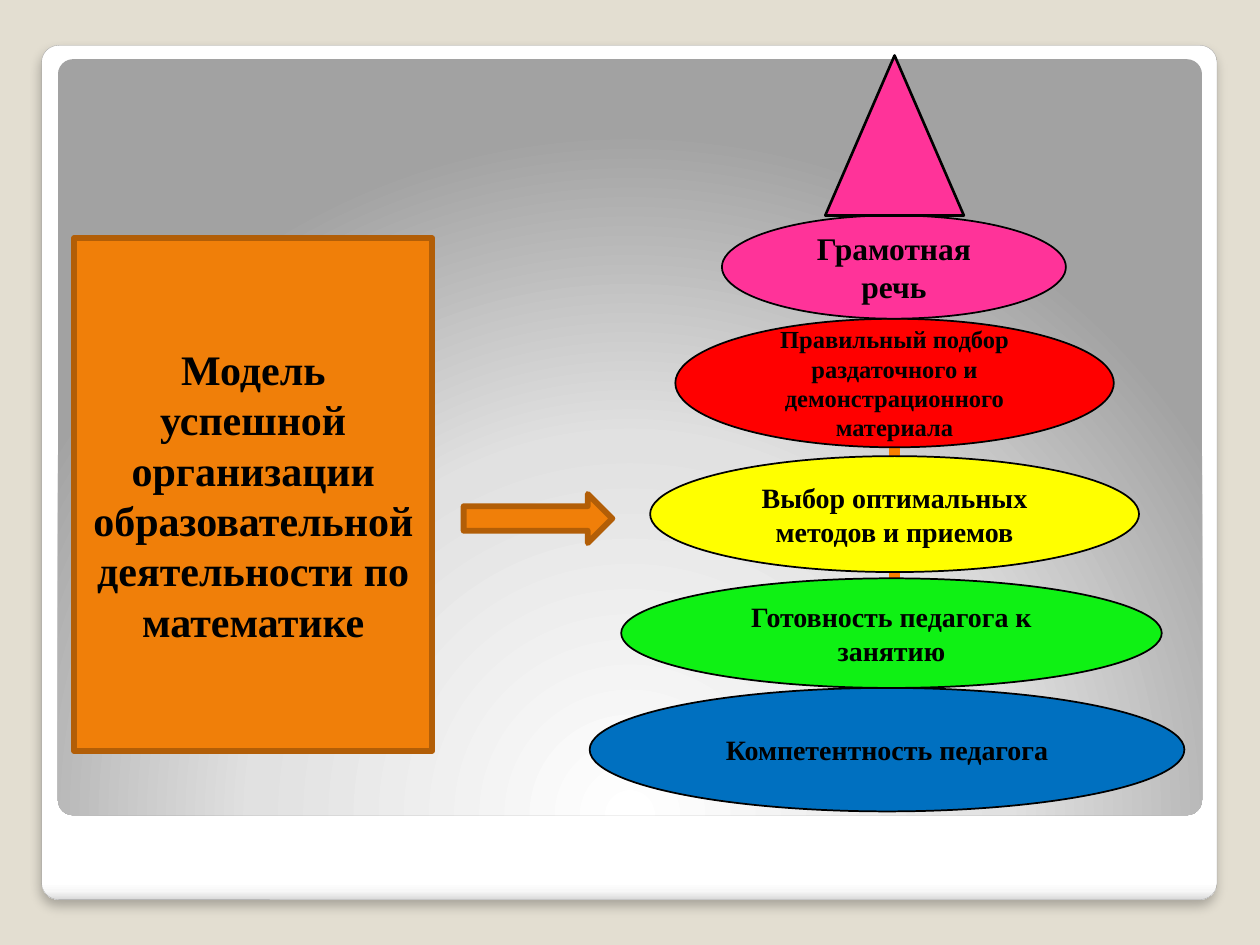
from lxml.etree import SubElement
from pptx import Presentation
from pptx.dml.color import RGBColor
from pptx.enum.shapes import MSO_CONNECTOR, MSO_SHAPE as Shape
from pptx.enum.text import MSO_ANCHOR, PP_ALIGN
from pptx.oxml import parse_xml
from pptx.oxml.ns import nsdecls, qn
from pptx.util import Inches, Pt

WIDTH, HEIGHT = Inches(10), Inches(7.5)
FONT = "Times New Roman"
BEIGE = RGBColor(0xE3, 0xDE, 0xD1)
WHITE = RGBColor(0xFF, 0xFF, 0xFF)
PALE = RGBColor(0xF7, 0xF7, 0xF7)
SILVER = RGBColor(0xDA, 0xDA, 0xDA)
LIGHT_GREY = RGBColor(0xE1, 0xE1, 0xE1)
GREY = RGBColor(0xA2, 0xA2, 0xA2)
EDGE_GREY = RGBColor(0xA4, 0xA4, 0xA4)
BLACK = RGBColor(0, 0, 0)
ORANGE = RGBColor(0xF0, 0x7F, 0x09)
BROWN = RGBColor(0xB2, 0x5E, 0x07)
BRIGHT_ORANGE = RGBColor(0xF9, 0x7F, 0x00)
PINK = RGBColor(0xFF, 0x33, 0x99)
RED = RGBColor(0xFF, 0, 0)
YELLOW = RGBColor(0xFF, 0xFF, 0)
GREEN = RGBColor(0x0F, 0xF1, 0x14)
BLUE = RGBColor(0, 0x70, 0xC0)

# Left, top, width, height in percent of the slide; fill; text; size
LEVELS = [
    ((46.8, 72.8, 47.2, 13.07), BLUE, "Компетентность педагога", 16),
    ((49.3, 61.2, 42.9, 11.6), GREEN, "Готовность педагога к занятию", 16),
    ((53.6, 33.73, 34.8, 13.6), RED,
     "Правильный подбор раздаточного и демонстрационного материала", 14),
    ((51.6, 48.27, 38.8, 12.27), YELLOW, "Выбор оптимальных методов и приемов", 16),
    ((57.3, 22.8, 27.3, 10.93), PINK, "Грамотная речь", 18),
]


def across(percent):
    return round(WIDTH * percent / 100)


def down(percent):
    return round(HEIGHT * percent / 100)


def add_figure(page, kind, area, fill=None, line=None, weight=1):
    """Add a preset shape whose area is given in percent of the slide."""
    left, top, width, height = area
    figure = page.shapes.add_shape(
        kind, across(left), down(top), across(width), down(height))
    figure.shadow.inherit = False
    if fill is None:
        figure.fill.background()
    else:
        figure.fill.solid()
        figure.fill.fore_color.rgb = fill
    if line is None:
        figure.line.fill.background()
    else:
        figure.line.color.rgb = line
        figure.line.width = Pt(weight)
    return figure


def round_joins(figure):
    SubElement(figure.element.spPr.find(qn("a:ln")), qn("a:round"))


def set_gradient(figure, stops, direction):
    """Replace the empty fill by colour stops (percent, colour)."""
    marks = "".join(
        f'<a:gs pos="{place * 1000}"><a:srgbClr val="{colour}"/></a:gs>'
        for place, colour in stops)
    gradient = parse_xml(
        f'<a:gradFill {nsdecls("a")} rotWithShape="1">'
        f"<a:gsLst>{marks}</a:gsLst>{direction}</a:gradFill>")
    properties = figure.element.spPr
    properties.replace(properties.find(qn("a:noFill")), gradient)


def set_shadow(figure, blur, distance, opacity):
    effects = figure.element.spPr.find(qn("a:effectLst"))
    effects.append(parse_xml(
        f'<a:outerShdw {nsdecls("a")} blurRad="{Pt(blur)}" dist="{Pt(distance)}" '
        f'dir="5400000" algn="t" rotWithShape="0"><a:srgbClr val="{BLACK}">'
        f'<a:alpha val="{opacity * 1000}"/></a:srgbClr></a:outerShdw>'))


def write(figure, text, size):
    frame = figure.text_frame
    frame.word_wrap = True
    frame.vertical_anchor = MSO_ANCHOR.MIDDLE
    para = frame.paragraphs[0]
    para.alignment = PP_ALIGN.CENTER
    span = para.add_run()
    span.text = text
    span.font.name = FONT
    span.font.size = Pt(size)
    span.font.bold = True
    span.font.color.rgb = BLACK


def add_backdrop(page):
    page.background.fill.solid()
    page.background.fill.fore_color.rgb = BEIGE
    card = add_figure(page, Shape.ROUNDED_RECTANGLE, (3.3, 4.8, 93.3, 90.4),
                      line=EDGE_GREY, weight=0.16)
    set_gradient(card, [(0, WHITE), (98, WHITE), (99, PALE), (100, SILVER)],
                 '<a:lin ang="5400000" scaled="0"/>')
    set_shadow(card, blur=6, distance=4, opacity=25)
    panel = add_figure(page, Shape.ROUNDED_RECTANGLE, (4.6, 6.27, 90.8, 80))
    set_gradient(panel, [(0, WHITE), (55, LIGHT_GREY), (100, GREY)],
                 '<a:path path="circle"><a:fillToRect l="50000" t="175000" '
                 'r="50000" b="-75000"/></a:path>')
    for layer in (card, panel):
        layer.adjustments[0] = 0.02


def add_axis(page):
    """Add the vertical rod that the levels are threaded on."""
    axis = page.shapes.add_connector(
        MSO_CONNECTOR.STRAIGHT, across(71), down(70.27), across(71), down(25.2))
    axis.line.color.rgb = BRIGHT_ORANGE
    axis.line.width = Pt(6)
    SubElement(axis.element.spPr, qn("a:effectLst"))


def add_pyramid(page):
    add_axis(page)
    for area, colour, text, size in LEVELS:
        write(add_figure(page, Shape.OVAL, area, colour, BLACK), text, size)
    add_figure(page, Shape.FLOWCHART_EXTRACT, (65.5, 5.87, 11, 16.93),
               PINK, BLACK, 1.5)


def add_model(page):
    model = add_figure(page, Shape.RECTANGLE, (5.9, 25.2, 28.4, 54.27),
                       ORANGE, BROWN, 3.35)
    write(model, "Модель успешной организации образовательной "
                 "деятельности по математике", 24)
    arrow = add_figure(page, Shape.RIGHT_ARROW, (36.8, 52.27, 11.8, 5.2),
                       ORANGE, BROWN, 3.35)
    for figure in (model, arrow):
        round_joins(figure)


def main():
    deck = Presentation()
    deck.slide_width, deck.slide_height = WIDTH, HEIGHT
    page = deck.slides.add_slide(deck.slide_layouts[6])
    add_backdrop(page)
    add_model(page)
    add_pyramid(page)
    deck.save("out.pptx")


if __name__ == "__main__":
    main()
